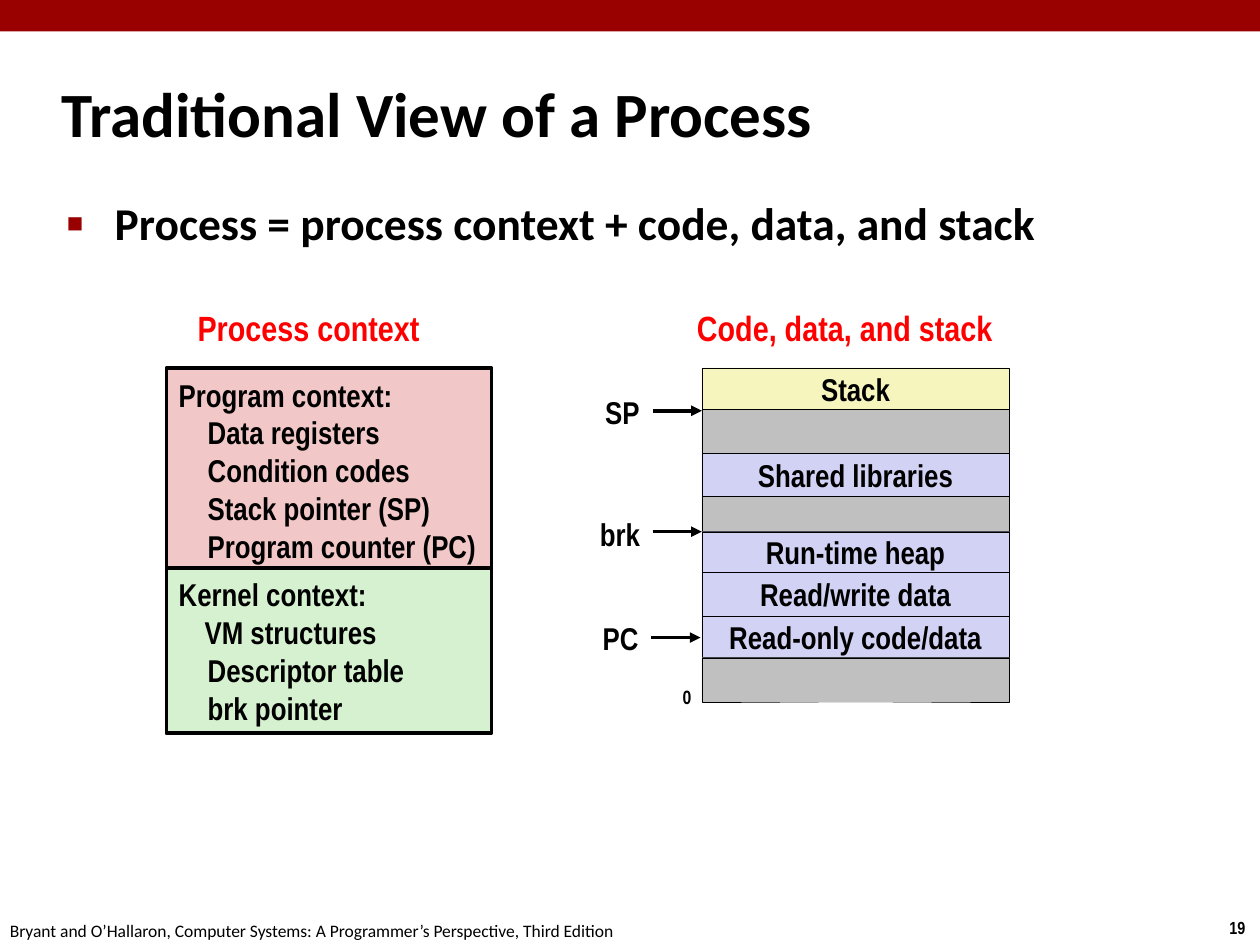
from dataclasses import dataclass
from itertools import accumulate

from lxml import etree
from pptx import Presentation
from pptx import util as u
from pptx.dml.color import RGBColor
from pptx.enum import shapes, text
from pptx.oxml.ns import qn

COLORS = {
    "black": "000000", "banner": "990000", "heading": "FF0000",
    "program": "F1C7C7", "kernel": "D5F1CF",
    "stack": "F6F5BD", "used": "D2D2F4", "gap": "C0C0C0",
}
CELL = 0.1
NARROW, SANS = "Arial Narrow", "Calibri"
LEFT, CENTER = text.PP_ALIGN.LEFT, text.PP_ALIGN.CENTER
MIDDLE, TOP = text.MSO_ANCHOR.MIDDLE, text.MSO_ANCHOR.TOP
MEMORY_COLUMN, MEMORY_WIDTH, DIAGRAM_ROW = 55.7, 24.4, 29.2
CONTEXT_COLUMN, CONTEXT_WIDTH = 13.2, 25.8


@dataclass
class Area:
    column: float
    row: float
    columns: float
    rows: float

    def lengths(self) -> tuple:
        return tuple(map(grid, (self.column, self.row, self.columns, self.rows)))


@dataclass
class Style:
    size: float
    font: str = NARROW
    bold: bool = True
    color: str = "black"
    align: int = CENTER
    anchor: int = MIDDLE


@dataclass
class Label:
    words: str
    area: Area
    style: Style


@dataclass
class Region:
    words: str
    color: str
    rows: float


@dataclass
class Pointer:
    words: str
    label: Area
    start: float
    row: float


@dataclass
class Context:
    heading: str
    items: list
    indents: list
    color: str
    area: Area


BODY = Style(18)
HEADING = Style(20, color="heading")
LABELS = [
    Label("Process context", Area(14.6, 23.8, 19.8, 4.4), HEADING),
    Label("Code, data, and stack", Area(54.2, 23.8, 25.7, 4.4), HEADING),
    Label("0", Area(53.2, 53.9, 2.7, 2.9), Style(11, align=LEFT, anchor=TOP)),
    Label("19", Area(96.6, 72.3, 3.4, 2.7), Style(10, align=LEFT, anchor=TOP)),
    Label("Bryant and O’Hallaron, Computer Systems: A Programmer’s Perspective, Third Edition",
          Area(-0.2, 72.5, 50.8, 2.7), Style(10, SANS, False, align=LEFT, anchor=TOP)),
]
REGIONS = [
    Region("Stack", "stack", 3.3),
    Region("", "gap", 3.5),
    Region("Shared libraries", "used", 3.4),
    Region("", "gap", 2.8),
    Region("Run-time heap", "used", 3.2),
    Region("Read/write data", "used", 3.5),
    Region("Read-only code/data", "used", 3.3),
    Region("", "gap", 3.5),
]
POINTERS = [
    Pointer("SP", Area(47, 30.7, 4.8, 4), 51.8, 32.6),
    Pointer("brk", Area(46.6, 40.4, 5.2, 4), 51.8, 42.2),
    Pointer("PC", Area(46.8, 48.6, 4.9, 4), 51.7, 50.6),
]
CONTEXTS = [
    Context("Program context:",
            ["Data registers", "Condition codes", "Stack pointer (SP)", "Program counter (PC)"],
            [2.3] * 4, "program", Area(CONTEXT_COLUMN, DIAGRAM_ROW, CONTEXT_WIDTH, 16.2)),
    Context("Kernel context:", ["VM structures", "Descriptor table", "brk pointer"],
            [2.05, 2.3, 2.3], "kernel", Area(CONTEXT_COLUMN, 45.1, CONTEXT_WIDTH, 13.1)),
]


def grid(cells: float) -> int:
    return u.Inches(cells * CELL)


def rgb(name: str) -> RGBColor:
    return RGBColor.from_string(COLORS[name])


def write(shape, words: str, style: Style, wrap: bool = False) -> None:
    frame = shape.text_frame
    frame.text = words
    frame.word_wrap = wrap
    frame.auto_size = text.MSO_AUTO_SIZE.NONE
    frame.vertical_anchor = style.anchor
    for paragraph in frame.paragraphs:
        paragraph.alignment = style.align
        for run in paragraph.runs:
            run.font.size = u.Pt(style.size)
            run.font.name = style.font
            run.font.bold = style.bold
            run.font.color.rgb = rgb(style.color)


def indent(paragraph, left: float, first: float = 0):
    properties = paragraph._p.get_or_add_pPr()
    properties.set("marL", str(grid(left)))
    properties.set("indent", str(grid(first)))
    return properties


def draw_label(slide, label: Label) -> None:
    write(slide.shapes.add_textbox(*label.area.lengths()), label.words, label.style)


def draw_box(slide, area: Area, color: str, line: float = 0):
    box = slide.shapes.add_shape(shapes.MSO_SHAPE.RECTANGLE, *area.lengths())
    box.shadow.inherit = False
    box.fill.solid()
    box.fill.fore_color.rgb = rgb(color)
    if line:
        box.line.color.rgb = rgb("black")
        box.line.width = u.Pt(line)
    else:
        box.line.fill.background()
    return box


def draw_context(slide, context: Context) -> None:
    box = draw_box(slide, context.area, context.color, 2)
    write(box, "\n".join([context.heading, *context.items]), Style(18, align=LEFT), True)
    box.text_frame.margin_right = 0
    for paragraph, left in zip(box.text_frame.paragraphs[1:], context.indents):
        indent(paragraph, left)


def draw_memory(slide) -> None:
    tops = accumulate((region.rows for region in REGIONS), initial=DIAGRAM_ROW)
    for region, top in zip(REGIONS, tops):
        box = draw_box(slide, Area(MEMORY_COLUMN, top, MEMORY_WIDTH, region.rows),
                       region.color, 0.25)
        if region.words:
            write(box, region.words, BODY)


def draw_pointer(slide, pointer: Pointer) -> None:
    draw_label(slide, Label(pointer.words, pointer.label, BODY))
    arrow = slide.shapes.add_connector(
        shapes.MSO_CONNECTOR.STRAIGHT, grid(pointer.start), grid(pointer.row),
        grid(pointer.start + 3.9), grid(pointer.row))
    arrow.line.color.rgb = rgb("black")
    arrow.line.width = u.Pt(2)
    etree.SubElement(arrow.line._get_or_add_ln(), qn("a:tailEnd"), type="triangle")
    etree.SubElement(arrow._element.spPr, qn("a:effectLst"))


def fill_placeholder(shape, words: str, area: Area, style: Style):
    shape.left, shape.top, shape.width, shape.height = area.lengths()
    write(shape, words, style, True)
    return shape.text_frame.paragraphs[0]


def main() -> None:
    presentation = Presentation()
    presentation.slide_width, presentation.slide_height = u.Inches(10), u.Inches(7.5)
    slide = presentation.slides.add_slide(presentation.slide_layouts[1])
    draw_box(slide, Area(0, 0, 100, 2.5), "banner")
    title = fill_placeholder(slide.shapes.title, "Traditional View of a Process",
                             Area(3.9, 4.8, 83, 8.3), Style(36, SANS, align=LEFT))
    indent(title, 1.3, -1.3)
    point = fill_placeholder(slide.placeholders[1],
                             "Process = process context + code, data, and stack",
                             Area(4.3, 15, 86.4, 54.4), Style(26, SANS, align=LEFT, anchor=TOP))
    properties = indent(point, 3.8, -3.8)
    bullet_color = etree.SubElement(properties, qn("a:buClr"))
    etree.SubElement(bullet_color, qn("a:srgbClr"), val=COLORS["banner"])
    etree.SubElement(properties, qn("a:buSzPct"), val="60000")
    etree.SubElement(properties, qn("a:buChar"), char="■")
    for context in CONTEXTS:
        draw_context(slide, context)
    draw_memory(slide)
    for pointer in POINTERS:
        draw_pointer(slide, pointer)
    for label in LABELS:
        draw_label(slide, label)
    presentation.save("out.pptx")


if __name__ == "__main__":
    main()
